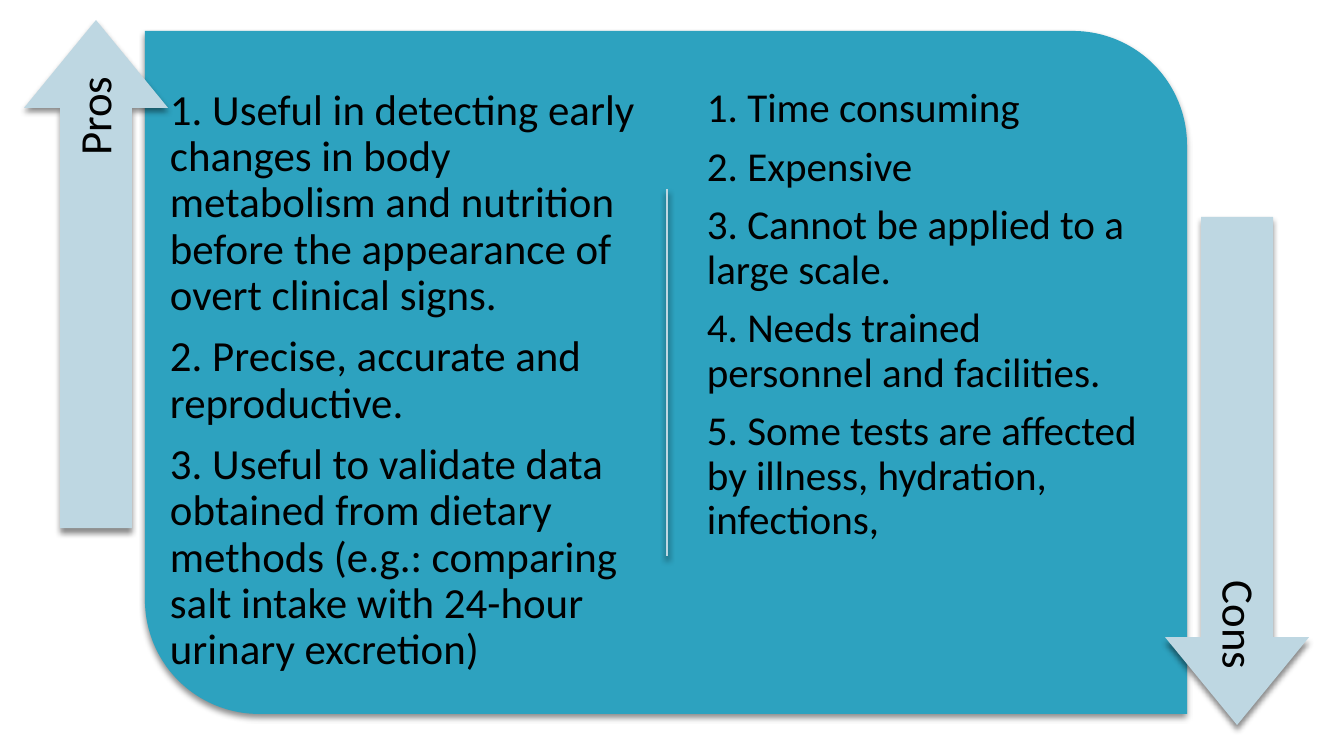
from lxml import etree
from pptx import Presentation
from pptx.dml.color import RGBColor
from pptx.enum.shapes import MSO_CONNECTOR, MSO_SHAPE
from pptx.enum.text import MSO_ANCHOR, PP_ALIGN
from pptx.oxml.ns import qn
from pptx.util import Pt

PANEL = MSO_SHAPE.ROUND_2_DIAG_RECTANGLE
ARROW = MSO_SHAPE.RIGHT_ARROW
LINE = MSO_CONNECTOR.STRAIGHT
TOP, MIDDLE = MSO_ANCHOR.TOP, MSO_ANCHOR.MIDDLE
LEFT, RIGHT = PP_ALIGN.LEFT, PP_ALIGN.RIGHT

COLORS = {"panel": "2DA2BF", "pale": "BED7E2", "text": "000000", "shadow": "000000"}
FONT = "Calibri"
WIDTH, HEIGHT = 1344, 756
SCALE = 9144000 / WIDTH

# text, box in px, font size, inset in px
LISTS = [
    (["1. Useful in detecting early changes in body metabolism and nutrition "
      "before the appearance of overt clinical signs.",
      "2. Precise, accurate and reproductive.",
      "3. Useful to validate data obtained from dietary methods (e.g.: "
      "comparing salt intake with 24-hour urinary excretion)"],
     (157, 75, 519, 594), 23, 13),
    (["1. Time consuming",
      "2. Expensive",
      "3. Cannot be applied to a large scale.",
      "4. Needs trained personnel and facilities.",
      "5. Some tests are affected by illness, hydration, infections,"],
     (695, 75, 465, 597), 22, 12),
]
# label, turn, arrow centre, label centre
ARROWS = [
    ("Pros", 270, (96, 274), (97, 296)),
    ("Cons", 90, (1237, 471), (1237, 450)),
]
ARROW_SIZE = (508, 144)
LABEL_SIZE = (465, 73)


def px(*vals):
    return [round(v * SCALE) for v in vals]


def rgb(name):
    return RGBColor.from_string(COLORS[name])


def centred(mid, size):
    """Box of the given size around a centre point."""
    return (mid[0] - size[0] / 2, mid[1] - size[1] / 2, *size)


def add_shadow(shape):
    props = shape._element.spPr
    for old in props.findall(qn("a:effectLst")):
        props.remove(old)
    effects = etree.SubElement(props, qn("a:effectLst"))
    outer = etree.SubElement(effects, qn("a:outerShdw"), blurRad=str(Pt(3)),
                             dist=str(Pt(2.4)), dir="5400000", rotWithShape="0")
    color = etree.SubElement(outer, qn("a:srgbClr"), val=COLORS["shadow"])
    etree.SubElement(color, qn("a:alpha"), val="45000")


def add_block(slide, kind, box, color, adjust, turn=0):
    shape = slide.shapes.add_shape(kind, *px(*box))
    shape.rotation = turn
    for i, val in enumerate(adjust):
        shape.adjustments[i] = val
    shape.fill.solid()
    shape.fill.fore_color.rgb = rgb(color)
    shape.line.fill.background()
    add_shadow(shape)


def add_text(slide, lines, box, size, inset=13, anchor=TOP, align=LEFT, turn=0):
    shape = slide.shapes.add_textbox(*px(*box))
    shape.rotation = turn
    frame = shape.text_frame
    frame.word_wrap = True
    frame.vertical_anchor = anchor
    for side in ("left", "top", "right", "bottom"):
        setattr(frame, "margin_" + side, px(inset)[0])
    for i, line in enumerate(lines):
        para = frame.paragraphs[0] if i == 0 else frame.add_paragraph()
        para.alignment = align
        para.line_spacing = 0.9
        para.space_after = Pt(0.35 * size)
        run = para.add_run()
        run.text = line
        run.font.name = FONT
        run.font.size = Pt(size)
        run.font.color.rgb = rgb("text")


def main():
    deck = Presentation()
    deck.slide_width, deck.slide_height = px(WIDTH, HEIGHT)
    slide = deck.slides.add_slide(deck.slide_layouts[6])

    add_block(slide, PANEL, (145, 31, 1042, 683), "panel", (0, 0.167))
    rule = slide.shapes.add_connector(LINE, *px(667, 189, 667, 556))
    rule.line.color.rgb = rgb("pale")
    rule.line.width = Pt(1.5)
    add_shadow(rule)

    for lines, box, size, inset in LISTS:
        add_text(slide, lines, box, size, inset=inset)
    for label, turn, mid, spot in ARROWS:
        add_block(slide, ARROW, centred(mid, ARROW_SIZE), "pale", (0.5, 0.61), turn)
        add_text(slide, [label], centred(spot, LABEL_SIZE), 24,
                 anchor=MIDDLE, align=RIGHT, turn=turn)

    deck.save("out.pptx")


if __name__ == "__main__":
    main()
